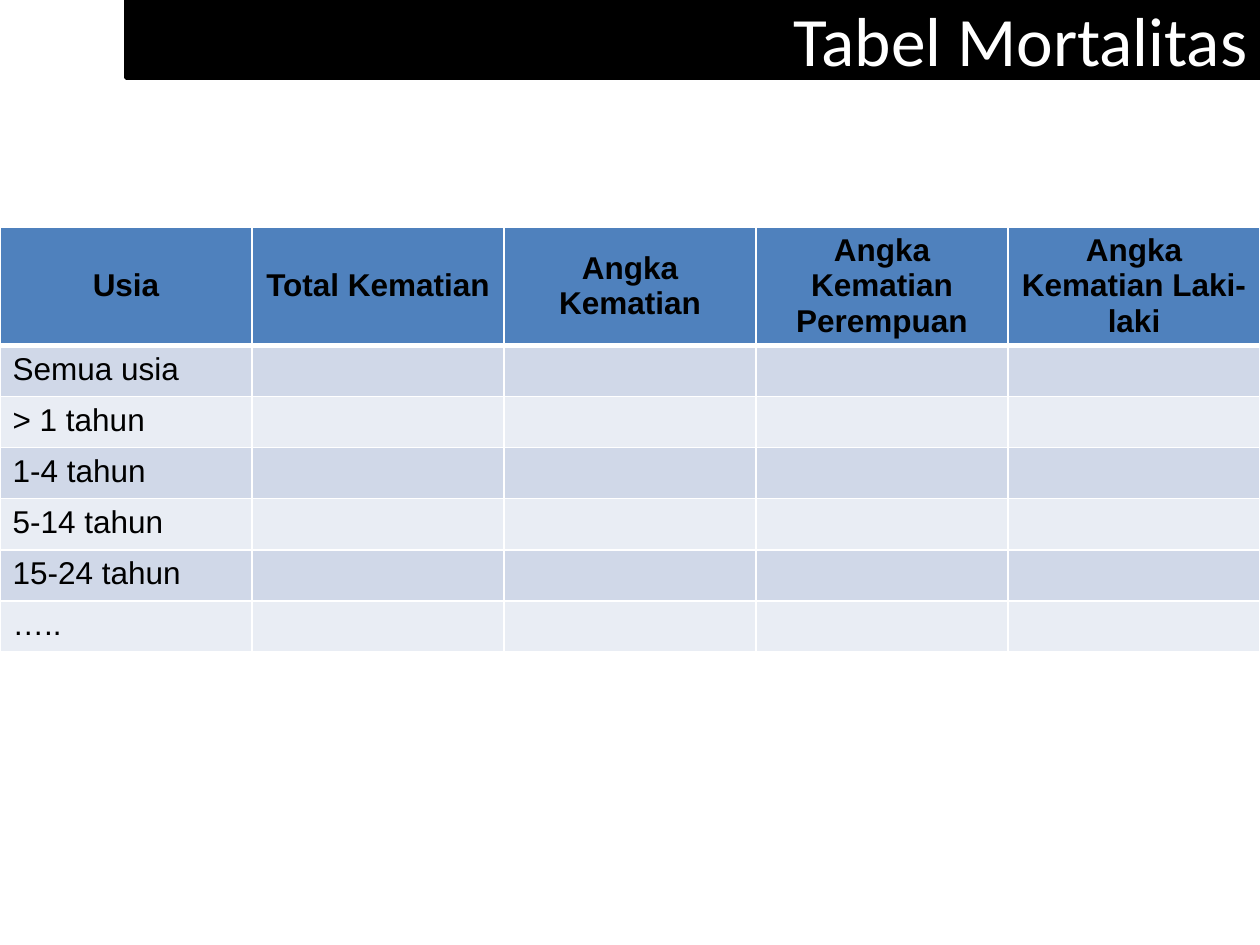
from dataclasses import dataclass

from lxml import etree
from pptx import Presentation
from pptx.dml.color import RGBColor
from pptx.enum.text import MSO_ANCHOR, MSO_AUTO_SIZE, PP_ALIGN
from pptx.oxml.ns import qn
from pptx.util import Pt

LEFT, CENTER, RIGHT = PP_ALIGN.LEFT, PP_ALIGN.CENTER, PP_ALIGN.RIGHT
TOP, MIDDLE = MSO_ANCHOR.TOP, MSO_ANCHOR.MIDDLE
NO_AUTOFIT = MSO_AUTO_SIZE.NONE
TITLE_ONLY_LAYOUT = 5
SLIDE_WIDTH, SLIDE_HEIGHT = 720, 540

HEADINGS = [
    "Usia",
    "Total Kematian",
    "Angka Kematian",
    "Angka Kematian Perempuan",
    "Angka Kematian Laki-laki",
]
AGE_GROUPS = ["Semua usia", "> 1 tahun", "1-4 tahun", "5-14 tahun", "15-24 tahun", "….."]


@dataclass(frozen=True)
class Theme:
    title_font: str = "Calibri"
    table_font: str = "Arial"
    title_size: float = 39.6
    table_size: float = 18
    black: str = "000000"
    white: str = "FFFFFF"
    header_fill: str = "4F81BD"
    band_fills: tuple = ("D0D8E8", "E9EDF4")
    rule: float = 1
    header_rule: float = 3


class SlideBuilder:
    def __init__(self, slide, theme):
        self.slide = slide
        self.theme = theme

    def add_run(self, paragraph, text, font_name, size, color, bold=False):
        run = paragraph.add_run()
        run.text = text
        font = run.font
        font.name, font.size, font.bold = font_name, Pt(size), bold
        font.color.rgb = RGBColor.from_string(color)

    def add_title(self, text, left, top, width, height):
        theme = self.theme
        title = self.slide.shapes.title
        title.left, title.top = Pt(left), Pt(top)
        title.width, title.height = Pt(width), Pt(height)
        title.fill.solid()
        title.fill.fore_color.rgb = RGBColor.from_string(theme.black)
        title.line.color.rgb = RGBColor.from_string(theme.black)
        title.line.width = Pt(2)
        frame = title.text_frame
        frame.auto_size, frame.vertical_anchor = NO_AUTOFIT, MIDDLE
        paragraph = frame.paragraphs[0]
        paragraph.alignment = RIGHT
        self.add_run(paragraph, text, theme.title_font, theme.title_size, theme.white)

    def set_borders(self, cell, top, bottom):
        """Draw white rules round a cell; side rules keep the theme width."""
        theme = self.theme
        properties = cell._tc.get_or_add_tcPr()
        widths = {"a:lnL": theme.rule, "a:lnR": theme.rule, "a:lnT": top, "a:lnB": bottom}
        for position, (tag, width) in enumerate(widths.items()):
            line = etree.Element(qn(tag), w=str(Pt(width)))
            fill = etree.SubElement(line, qn("a:solidFill"))
            etree.SubElement(fill, qn("a:srgbClr"), val=theme.white)
            properties.insert(position, line)

    def add_table(self, headings, row_labels, top, header_height, row_height):
        theme = self.theme
        height = header_height + row_height * len(row_labels)
        table = self.slide.shapes.add_table(
            len(row_labels) + 1, len(headings), 0, Pt(top), Pt(SLIDE_WIDTH), Pt(height)
        ).table
        for row_index, row in enumerate(table.rows):
            is_header = row_index == 0
            row.height = Pt(header_height if is_header else row_height)
            fill = theme.header_fill if is_header else theme.band_fills[(row_index - 1) % 2]
            labels = headings if is_header else [row_labels[row_index - 1]]
            top_rule = theme.header_rule if row_index == 1 else theme.rule
            bottom_rule = theme.header_rule if is_header else theme.rule
            for column, cell in enumerate(row.cells):
                cell.fill.solid()
                cell.fill.fore_color.rgb = RGBColor.from_string(fill)
                cell.vertical_anchor = MIDDLE if is_header else TOP
                self.set_borders(cell, top_rule, bottom_rule)
                if column < len(labels):
                    paragraph = cell.text_frame.paragraphs[0]
                    paragraph.alignment = CENTER if is_header else LEFT
                    self.add_run(paragraph, labels[column], theme.table_font,
                                 theme.table_size, theme.black, bold=is_header)


def main():
    presentation = Presentation()
    presentation.slide_width, presentation.slide_height = Pt(SLIDE_WIDTH), Pt(SLIDE_HEIGHT)
    slide = presentation.slides.add_slide(presentation.slide_layouts[TITLE_ONLY_LAYOUT])
    builder = SlideBuilder(slide, Theme())
    builder.add_title("Tabel Mortalitas", left=72, top=0, width=648, height=44.64)
    builder.add_table(HEADINGS, AGE_GROUPS, top=129.6, header_height=67.4, row_height=29.25)
    presentation.save("out.pptx")


if __name__ == "__main__":
    main()
